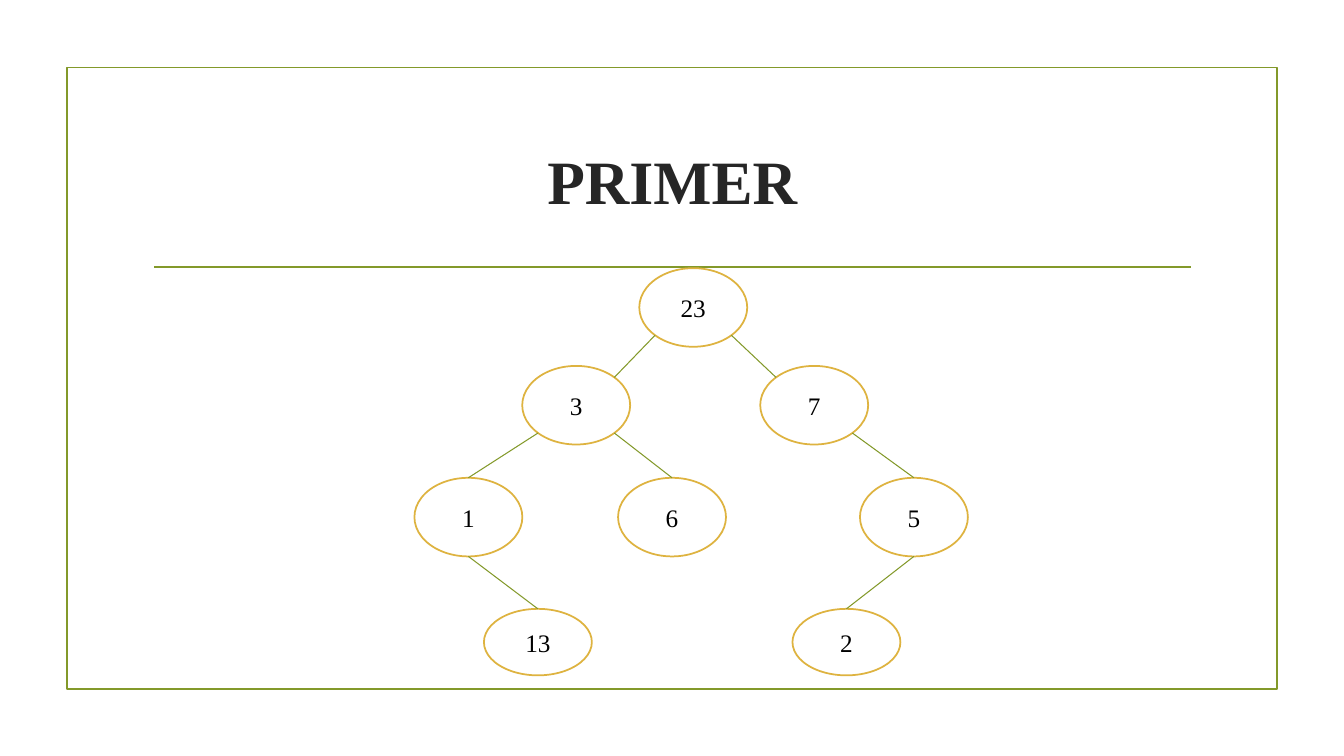
from collections import namedtuple
from dataclasses import dataclass
from math import sqrt

from lxml import etree
from pptx import Presentation
from pptx import util as u
from pptx.dml.color import RGBColor
from pptx.enum import shapes, text
from pptx.oxml import ns


@dataclass(frozen=True)
class Theme:
    font: str = "Times New Roman"
    white: str = "FFFFFF"
    green: str = "83992A"
    gold: str = "DEB340"
    title_color: str = "262626"
    node_color: str = "000000"
    title_size: float = 44
    node_size: float = 18
    outline: float = 1.25
    branch: float = 0.75


THEME = Theme()
WIDTH, HEIGHT = u.Inches(13.33), u.Inches(7.5)

# Boxes are given in percent of the slide's width and height
Box = namedtuple("Box", "left top width height")

# Tree levels: top offset and height within the tree's box
LEVELS = [(0, 10.4), (12.93, 10.4), (27.73, 10.4), (45.07, 8.8)]
NODE_WIDTH = 8.03

# Node label: level and horizontal centre within the tree's box
NODES = {
    "23": (0, 20.75),
    "3": (1, 12.04), "7": (1, 29.75),
    "1": (2, 4.02), "6": (2, 19.17), "5": (2, 37.17),
    "13": (3, 9.19), "2": (3, 32.15),
}

# Points on an ellipse, as directions from its centre
DIAGONAL = 1 / sqrt(2)
SITES = {
    "top": (0, -1), "bottom": (0, 1),
    "nw": (-DIAGONAL, -DIAGONAL), "ne": (DIAGONAL, -DIAGONAL),
    "sw": (-DIAGONAL, DIAGONAL), "se": (DIAGONAL, DIAGONAL),
}

# Parent, its site, child, its site
BRANCHES = [
    ("23", "sw", "3", "ne"), ("23", "se", "7", "nw"),
    ("3", "sw", "1", "top"), ("3", "se", "6", "top"),
    ("7", "se", "5", "top"),
    ("1", "bottom", "13", "top"), ("5", "bottom", "2", "top"),
]


def across(share):
    return round(WIDTH * share / 100)


def down(share):
    return round(HEIGHT * share / 100)


def place(box):
    return across(box.left), down(box.top), across(box.width), down(box.height)


def write(shape, words, size, color, bold=False):
    frame = shape.text_frame
    frame.word_wrap = True
    frame.vertical_anchor = text.MSO_ANCHOR.MIDDLE
    para = frame.paragraphs[0]
    para.alignment = text.PP_ALIGN.CENTER
    span = para.add_run()
    span.text = words
    span.font.name = THEME.font
    span.font.size = u.Pt(size)
    span.font.bold = bold
    span.font.color.rgb = RGBColor.from_string(color)


def add_outline(page, kind, box, color, fill=None):
    shape = page.shapes.add_shape(kind, *place(box))
    shape.shadow.inherit = False
    if fill:
        shape.fill.solid()
        shape.fill.fore_color.rgb = RGBColor.from_string(fill)
    else:
        shape.fill.background()
    shape.line.color.rgb = RGBColor.from_string(color)
    shape.line.width = u.Pt(THEME.outline)
    return shape


def add_line(page, start, end, weight):
    line = page.shapes.add_connector(
        shapes.MSO_CONNECTOR.STRAIGHT,
        across(start[0]), down(start[1]), across(end[0]), down(end[1]))
    line.line.color.rgb = RGBColor.from_string(THEME.green)
    line.line.width = u.Pt(weight)
    etree.SubElement(line._element.spPr, ns.qn("a:effectLst"))


def add_border(page, box):
    add_outline(page, shapes.MSO_SHAPE.RECTANGLE, box, THEME.green)


def add_heading(page, box, words):
    # Title, with a rule just below it
    title = page.shapes.add_textbox(*place(box))
    write(title, words, THEME.title_size, THEME.title_color, bold=True)
    inset = 0.83
    rule = box.top + box.height + 2
    add_line(page, (box.left + inset, rule),
             (box.left + box.width - inset, rule), THEME.outline)


def site_point(box, site):
    toward_x, toward_y = SITES[site]
    return (box.left + box.width / 2 * (1 + toward_x),
            box.top + box.height / 2 * (1 + toward_y))


def add_tree(page, box):
    # Nodes
    spots = {}
    for label, (level, centre) in NODES.items():
        top, height = LEVELS[level]
        spots[label] = Box(box.left + centre - NODE_WIDTH / 2,
                           box.top + top, NODE_WIDTH, height)
        node = add_outline(page, shapes.MSO_SHAPE.OVAL, spots[label],
                           THEME.gold, fill=THEME.white)
        write(node, label, THEME.node_size, THEME.node_color)
    # Branches
    for parent, leaving, child, arriving in BRANCHES:
        add_line(page, site_point(spots[parent], leaving),
                 site_point(spots[child], arriving), THEME.branch)


def main():
    deck = Presentation()
    deck.slide_width, deck.slide_height = WIDTH, HEIGHT
    page = deck.slides.add_slide(deck.slide_layouts[6])
    page.background.fill.solid()
    page.background.fill.fore_color.rgb = RGBColor.from_string(THEME.white)
    add_border(page, Box(4.98, 8.93, 90.02, 82.27))
    add_heading(page, Box(10.65, 14.27, 78.77, 19.07), "PRIMER")
    add_tree(page, Box(30.83, 35.47, 41.18, 53.87))
    deck.save("out.pptx")


if __name__ == "__main__":
    main()
